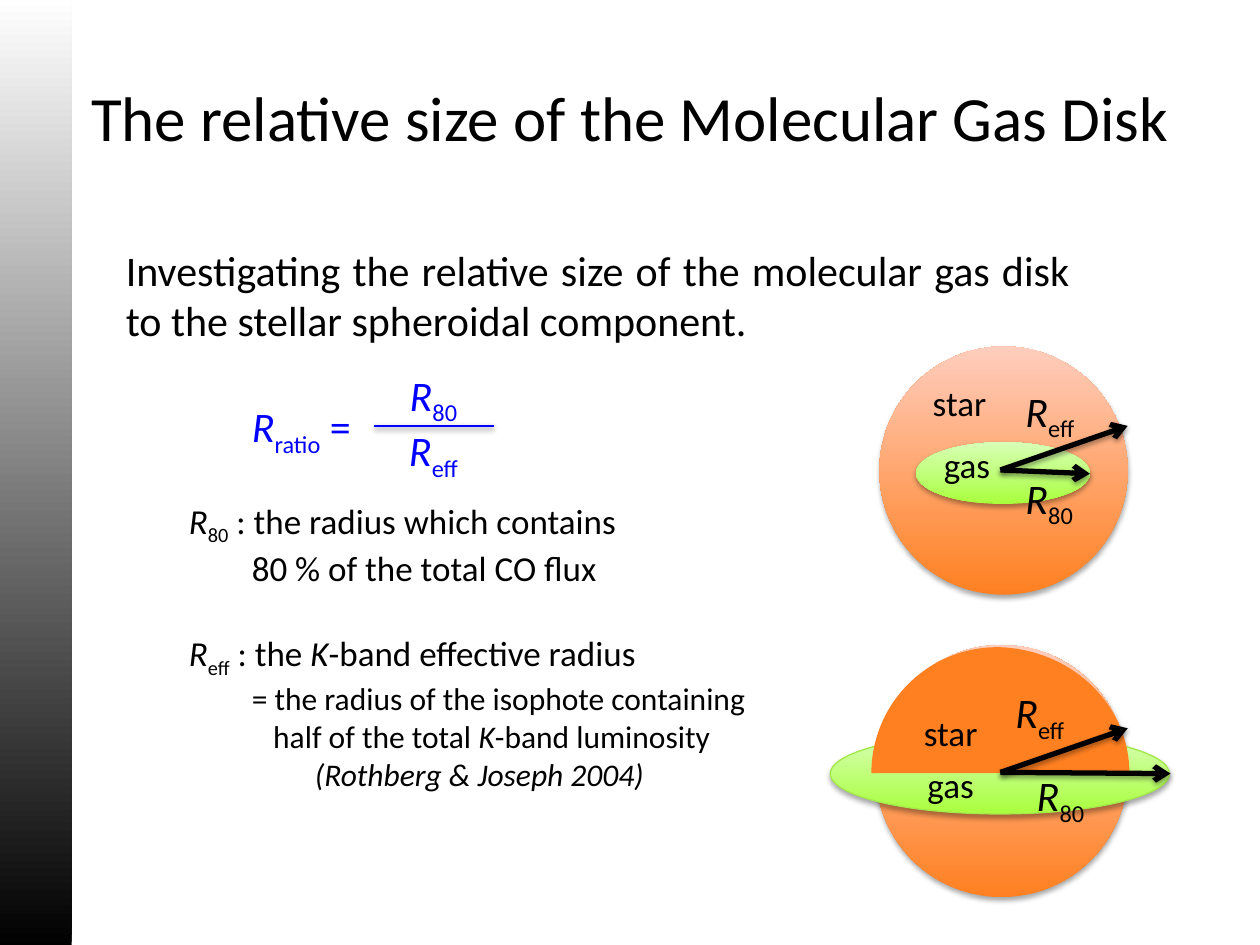
import pptx
import pptx.util
import pptx.dml.color
import pptx.enum.shapes
import pptx.enum.text
import pptx.oxml
import pptx.oxml.ns

Pt = pptx.util.Pt
RGB = pptx.dml.color.RGBColor.from_string
Kind = pptx.enum.shapes.MSO_SHAPE
Align = pptx.enum.text.PP_ALIGN

theme = dict(font="Calibri", ink="000000", math="0000FF", paper="FFFFFF",
             star=("FF8021", "FFCDBD"), gas=("A9FF3D", "D8FFB8"), rim="A4E94C",
             title=36, lead=24, body=20, note=18)

deck = pptx.Presentation()
deck.slide_width, deck.slide_height = pptx.util.Inches(10), pptx.util.Inches(7.5)
unit = deck.slide_width / 100  # grid of 100 columns by 75 rows
slide = deck.slides.add_slide(deck.slide_layouts[5])
shapes = slide.shapes


def write(par, mark, size, color="ink", align=Align.LEFT):
    """Fill a paragraph; parts split by | are italic after / and subscript after _."""
    par.alignment = align
    par.font.name, par.font.size = theme["font"], Pt(theme[size])
    par.font.color.rgb = RGB(theme[color])
    for part in mark.split("|"):
        run = par.add_run()
        run.text = part.lstrip("/_")
        if part[0] == "/":
            run.font.italic = True
        elif part[0] == "_":
            run.font._element.set("baseline", "-25000")


def shade(shape, alpha, drop):
    """Give a shape a soft shadow straight below it."""
    shape._element.spPr.append(pptx.oxml.parse_xml(
        f'<a:effectLst {pptx.oxml.ns.nsdecls("a")}>'
        f'<a:outerShdw blurRad="{Pt(3.1)}" dist="{Pt(drop)}" dir="5400000" rotWithShape="0">'
        f'<a:srgbClr val="000000"><a:alpha val="{alpha}000"/></a:srgbClr>'
        '</a:outerShdw></a:effectLst>'))


# Title
title = shapes.title
title.left, title.top, title.width, title.height = [int(n * unit) for n in (5, 3, 90, 12.5)]
title.text_frame.vertical_anchor = pptx.enum.text.MSO_ANCHOR.MIDDLE
write(title.text_frame.paragraphs[0], "The relative size of the Molecular Gas Disk",
      "title", align=Align.CENTER)

# Body: mark, size, indent in columns, space before in points
body = [
    ("Investigating the relative size of the molecular gas disk "
     "to the stellar spheroidal component.", "lead", 0, 0),
    ("/R|_80| : the radius which contains", "body", 5, 88),
    ("80 % of the total CO flux", "body", 10, 0),
    ("/R|_eff| : the |/K|-band effective radius", "body", 5, 24.4),
    ("= the radius of the isophote containing", "note", 10, 0),
    ("half of the total |/K|-band luminosity", "note", 11.7, 0),
    ("/(Rothberg & Joseph 2004)", "note", 15, 0),
]
frame = shapes.add_textbox(*[int(n * unit) for n in (9, 18.9, 76.9, 45.3)]).text_frame
frame.word_wrap = True
for row, (mark, size, dent, gap) in enumerate(body):
    par = frame.add_paragraph() if row else frame.paragraphs[0]
    par._p.get_or_add_pPr().set("marL", str(int(dent * unit)))
    if gap:
        par.space_before = Pt(gap)
    write(par, mark, size, align=Align.JUSTIFY)

# Side bar and galaxy discs, shaded upward
fills = [
    (Kind.RECTANGLE, (0, -0.2, 5.7, 75.6), (theme["ink"], theme["paper"]), None),
    (Kind.OVAL, (69.8, 27.5, 19.7, 19.7), theme["star"], None),
    (Kind.OVAL, (72.7, 35.1, 13.8, 4.9), theme["gas"], None),
    (Kind.OVAL, (69.5, 51.2, 20, 20), theme["star"], None),
    (Kind.OVAL, (65.9, 58.2, 26.9, 6.4), theme["gas"], theme["rim"]),
]
for kind, box, tones, rim in fills:
    shape = shapes.add_shape(kind, *[int(n * unit) for n in box])
    shape.fill.gradient()
    shape.fill.gradient_angle = 90
    for stop, tone in zip(shape.fill.gradient_stops, tones):
        stop.color.rgb = RGB(tone)
    if rim:
        shape.line.color.rgb, shape.line.width = RGB(rim), Pt(0.75)
    else:
        shape.line.fill.background()
    if kind == Kind.OVAL:
        shade(shape, 35, 1.8)
    else:
        shape.shadow.inherit = False

# Front half of the lower star: two quarter arcs
for box, turn in [((68.4, 51.5, 21.1, 19.7), 0), ((69.3, 51.5, 19.7, 19.7), 270)]:
    arc = shapes.add_shape(Kind.ARC, *[int(n * unit) for n in box])
    arc.adjustments[0], arc.adjustments[1] = 162, 215.84
    arc.rotation = turn
    arc.fill.solid()
    arc.fill.fore_color.rgb = arc.line.color.rgb = RGB(theme["star"][0])
    arc.line.width = Pt(2)
    arc.shadow.inherit = False

# Fraction bar and radius arrows
lines = [
    ((29.7, 33.8, 39.2, 33.8), "math", 1.5),
    ((79.4, 37.3, 86.5, 37.6), "ink", 3),
    ((79.4, 37.3, 89.5, 33.8), "ink", 3),
    ((79.4, 61.3, 89.5, 57.8), "ink", 3),
    ((79.4, 61.3, 92.9, 61.4), "ink", 3),
]
for ends, color, width in lines:
    line = shapes.add_connector(pptx.enum.shapes.MSO_CONNECTOR.STRAIGHT,
                                *[int(n * unit) for n in ends])
    line.line.color.rgb, line.line.width = RGB(theme[color]), Pt(width)
    if color == "ink":
        line.line._get_or_add_ln().append(pptx.oxml.parse_xml(
            f'<a:tailEnd {pptx.oxml.ns.nsdecls("a")} type="arrow"/>'))
    shade(line, 38, 1.6)

# Formula parts and labels
labels = [
    ("/R|_80", (29.7, 28.8, 9.4, 5), "lead", "math", Align.CENTER),
    ("/R|_eff", (29.7, 33.2, 9.4, 5), "lead", "math", Align.CENTER),
    ("/R|_ratio| =", (19, 31.3, 10.7, 5), "lead", "math", Align.LEFT),
    ("/R|_eff", (80.4, 30.1, 7.6, 5), "lead", "ink", Align.LEFT),
    ("/R|_80", (80.4, 37, 7.6, 5), "lead", "ink", Align.LEFT),
    ("star", (72.4, 29.8, 7.5, 4.4), "body", "ink", Align.CENTER),
    ("gas", (73, 34.7, 7.5, 4.4), "body", "ink", Align.CENTER),
    ("/R|_eff", (79.6, 54, 7.6, 5), "lead", "ink", Align.LEFT),
    ("/R|_80", (81.3, 60.6, 7.4, 5), "lead", "ink", Align.LEFT),
    ("gas", (71.7, 60.1, 7.5, 4.4), "body", "ink", Align.CENTER),
    ("star", (71.7, 56, 7.5, 4.4), "body", "ink", Align.CENTER),
]
for mark, box, size, color, align in labels:
    frame = shapes.add_textbox(*[int(n * unit) for n in box]).text_frame
    frame.word_wrap = True
    write(frame.paragraphs[0], mark, size, color, align)

deck.save("out.pptx")
